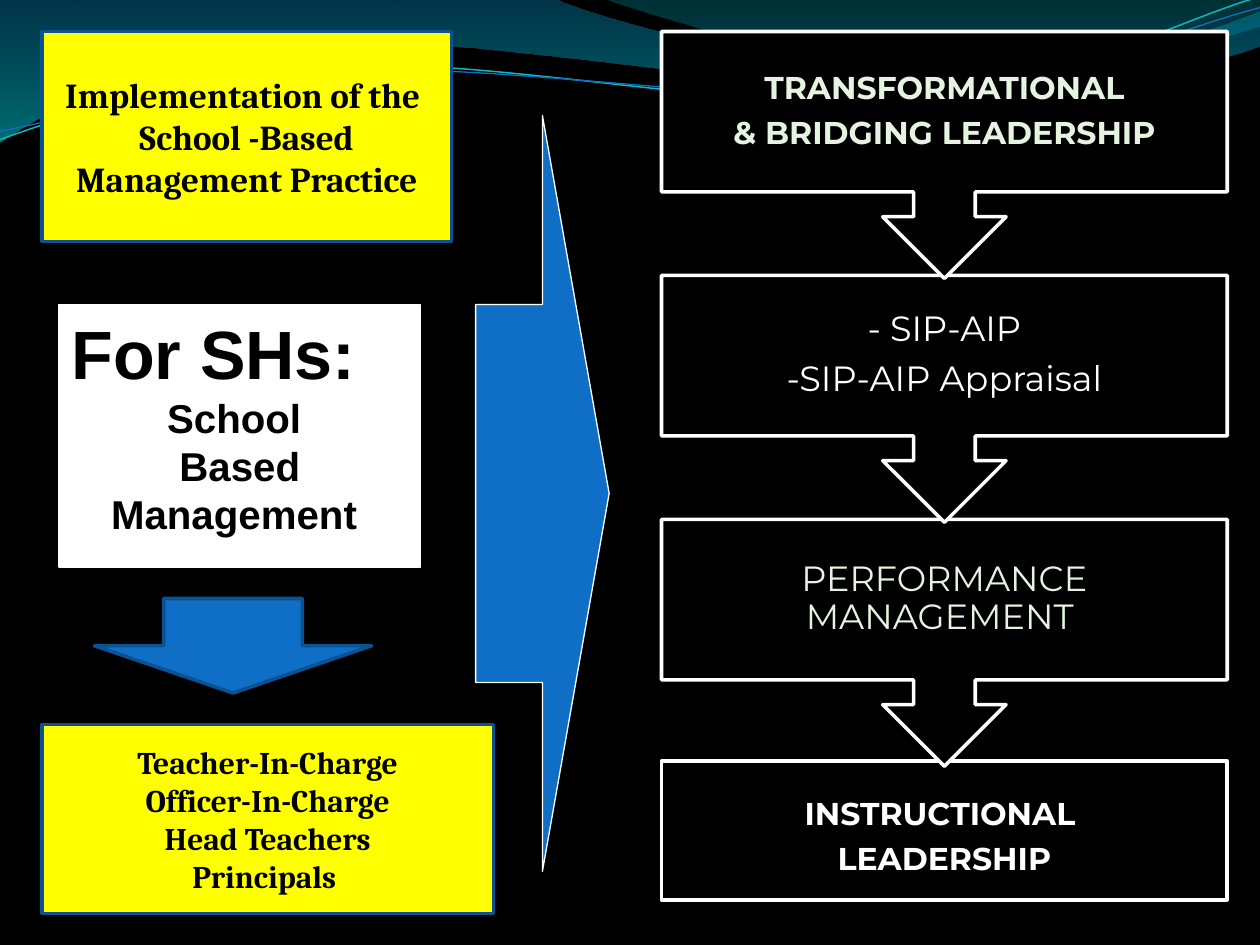
from dataclasses import dataclass
from typing import Optional

import pptx
import pptx.dml.color
import pptx.enum.shapes
import pptx.enum.text
import pptx.oxml
import pptx.oxml.ns
import pptx.util
from lxml import etree

Pt = pptx.util.Pt
qn = pptx.oxml.ns.qn
SHAPE = pptx.enum.shapes.MSO_SHAPE
ANCHOR = pptx.enum.text.MSO_ANCHOR
ALIGN = pptx.enum.text.PP_ALIGN

COLORS = {
    "black": "000000", "white": "FFFFFF", "yellow": "FFFF00",
    "blue": "0F6FC6", "navy": "0B5292", "mint": "E5F4E0", "teal": "0AB8BF",
}


@dataclass(frozen=True)
class Run:
    text: str
    size: float
    font: str
    color: str = "black"
    bold: bool = True


@dataclass(frozen=True)
class Para:
    runs: tuple[Run, ...]
    align: ALIGN = ALIGN.CENTER


@dataclass(frozen=True)
class Box:
    left: float
    top: float
    width: float
    height: float


@dataclass(frozen=True)
class GradientStop:
    position: int
    color: str
    opacity: int


@dataclass(frozen=True)
class Wave:
    """Pieces of two numbers are straight lines, pieces of six are cubic curves."""
    start: tuple[float, float]
    pieces: tuple[tuple[float, ...], ...]
    gradient: tuple[GradientStop, ...] = ()
    line: Optional[str] = None
    line_width: float = 0
    rotation: float = 0


@dataclass(frozen=True)
class Step:
    lines: tuple[str, ...]
    size: float
    color: str
    bold: bool
    inset: float


WAVES = (
    Wave((0, 0), ((316.8, -0.7), (342.7, 12.2, 478.1, 45.4, 545.8, 45.4),
                  (614.2, 45.4, 689.8, 18.7, 720, 6.5), (720.7, 25.9),
                  (707.8, 31.7, 626.4, 54.7, 537.1, 54),
                  (447.8, 54, 275, 20.2, 185, 24.5),
                  (92.9, 25.9, 33.1, 59.8, -0.7, 81.4), (0, 0)),
         gradient=(GradientStop(0, "0074A1", 45), GradientStop(100, "00C6CF", 55))),
    Wave((344.9, -0.7), ((366.5, 7.9, 491, 44.6, 553.7, 46.8),
                         (616.3, 49.7, 691.9, 23, 720, 15.1), (720, 0), (344.9, -0.7)),
         gradient=(GradientStop(0, "00A1A9", 30), GradientStop(80, "008BBF", 45))),
    Wave((-1.4, 62.9), ((33.8, 51.7, 114.1, 29.4, 199.8, 29.9),
                        (284.9, 30.3, 425.8, 67.3, 512.4, 64.9),
                        (599, 62.4, 676.5, 25.7, 720.2, 15.5)),
         line="teal", line_width=0.85, rotation=357.3),
    Wave((-1.1, 58), ((32.9, 53.8, 118.3, 32.5, 204.1, 33),
                      (290.6, 33.4, 429.7, 63.8, 515.5, 61.4),
                      (601.3, 59.6, 678.4, 30.1, 721.4, 21.3)),
         line="blue", line_width=0.75, rotation=357.3),
)

STEPS = (
    Step(("TRANSFORMATIONAL", "& BRIDGING LEADERSHIP"), 18, "mint", True, 10),
    Step(("- SIP-AIP", "-SIP-AIP Appraisal"), 20, "white", False, 11.5),
    Step(("PERFORMANCE MANAGEMENT ",), 20, "mint", False, 11.5),
)
LAST_STEP = Step(("INSTRUCTIONAL ", "LEADERSHIP"), 18, "white", True, 10)
STEP_LEFT, STEP_TOP, STEP_WIDTH, STEP_PITCH = 378, 18, 323.3, 139.4
CALLOUT_HEIGHT, CALLOUT_BODY = 141.1, 91.4
LAST_TOP, LAST_HEIGHT, LAST_TEXT_SHIFT = 435, 79.2, 4


def rgb(name: str):
    return pptx.dml.color.RGBColor.from_string(COLORS[name])


def set_gradient(sp, stops: tuple[GradientStop, ...]) -> None:
    """Fill from top to bottom with translucent stops."""
    sp.fill.background()
    old = sp._element.spPr.find(qn("a:noFill"))
    stop_xml = "".join(
        f'<a:gs pos="{g.position * 1000}"><a:srgbClr val="{g.color}">'
        f'<a:alpha val="{g.opacity * 1000}"/></a:srgbClr></a:gs>' for g in stops)
    fill = pptx.oxml.parse_xml(
        f'<a:gradFill {pptx.oxml.ns.nsdecls("a")} rotWithShape="1">'
        f'<a:gsLst>{stop_xml}</a:gsLst><a:lin ang="5400000" scaled="0"/></a:gradFill>')
    old.getparent().replace(old, fill)


def bend_segments(sp, pieces: tuple[tuple[float, ...], ...]) -> None:
    """Join the three segments of each curved piece into one cubic curve."""
    segments = iter(list(sp._element.iter(qn("a:lnTo"))))
    for piece in pieces:
        group = [next(segments) for _ in range(len(piece) // 2)]
        if len(group) == 3:
            curve = etree.Element(qn("a:cubicBezTo"))
            group[0].addprevious(curve)
            for segment in group:
                curve.append(segment[0])
                segment.getparent().remove(segment)


def add_wave(s, wave: Wave) -> None:
    points = [(Pt(x), Pt(y)) for piece in wave.pieces
              for x, y in zip(piece[::2], piece[1::2])]
    builder = s.shapes.build_freeform(*map(Pt, wave.start))
    builder.add_line_segments(points, close=bool(wave.gradient))
    sp = builder.convert_to_shape()
    bend_segments(sp, wave.pieces)
    sp.rotation = wave.rotation
    sp.shadow.inherit = False
    if wave.gradient:
        set_gradient(sp, wave.gradient)
        sp.line.fill.background()
    else:
        sp.fill.background()
        sp.line.color.rgb = rgb(wave.line)
        sp.line.width = Pt(wave.line_width)


def add_shape(s, kind: SHAPE, box: Box, fill: str, line: str, width: float = 2):
    sp = s.shapes.add_shape(kind, Pt(box.left), Pt(box.top), Pt(box.width), Pt(box.height))
    sp.shadow.inherit = False
    sp.fill.solid()
    sp.fill.fore_color.rgb = rgb(fill)
    sp.line.color.rgb = rgb(line)
    sp.line.width = Pt(width)
    return sp


def write(tf, paras, anchor=ANCHOR.MIDDLE, spacing=None, after=0) -> None:
    tf.word_wrap = True
    tf.vertical_anchor = anchor
    for i, para in enumerate(paras):
        p = tf.paragraphs[0] if i == 0 else tf.add_paragraph()
        p.alignment = para.align
        p.line_spacing = spacing
        p.space_after = Pt(after)
        for run in para.runs:
            r = p.add_run()
            r.text = run.text
            r.font.size = Pt(run.size)
            r.font.name = run.font
            r.font.bold = run.bold
            r.font.color.rgb = rgb(run.color)


def one_run_paras(lines, *style) -> list[Para]:
    return [Para((Run(line, *style),)) for line in lines]


def add_step_text(s, step: Step, top: float, height: float) -> None:
    tf = s.shapes.add_textbox(Pt(STEP_LEFT), Pt(top), Pt(STEP_WIDTH), Pt(height)).text_frame
    tf.margin_left = tf.margin_right = tf.margin_top = tf.margin_bottom = Pt(step.inset)
    paras = one_run_paras(step.lines, step.size, "Montserrat", step.color, step.bold)
    write(tf, paras, spacing=0.9, after=0.35 * step.size)


def add_steps(s) -> None:
    """Draw upwards, so that each arrow tip lies over the box below it."""
    add_shape(s, SHAPE.RECTANGLE, Box(STEP_LEFT, LAST_TOP, STEP_WIDTH, LAST_HEIGHT),
              "black", "white")
    add_step_text(s, LAST_STEP, LAST_TOP + LAST_TEXT_SHIFT, LAST_HEIGHT)
    for i, step in reversed(list(enumerate(STEPS))):
        top = STEP_TOP + i * STEP_PITCH
        sp = add_shape(s, SHAPE.UP_ARROW_CALLOUT,
                       Box(STEP_LEFT, top, STEP_WIDTH, CALLOUT_HEIGHT), "black", "white")
        sp.rotation = 180
        add_step_text(s, step, top, CALLOUT_BODY)


def add_left_column(s) -> None:
    sp = add_shape(s, SHAPE.RECTANGLE, Box(33.8, 174.2, 206.6, 149.8), "white", "white", 0.75)
    heading = Para((Run("For SHs: ", 39, "Arial"), Run(" ", 23, "Arial")), ALIGN.LEFT)
    body = one_run_paras(("School ", "Based Management "), 23, "Arial")
    write(sp.text_frame, [heading, *body], ANCHOR.TOP)

    add_shape(s, SHAPE.RIGHT_ARROW, Box(271.8, 66, 76.3, 432), "blue", "white", 0.75)

    cards = (
        (Box(24, 18, 234, 120), 20,
         ("Implementation of the ", "School -Based Management Practice")),
        (Box(24, 414, 258, 108), 18,
         ("Teacher-In-Charge", "Officer-In-Charge", "Head Teachers", "Principals ")),
    )
    for box, size, lines in cards:
        sp = add_shape(s, SHAPE.RECTANGLE, box, "yellow", "navy")
        write(sp.text_frame, one_run_paras(lines, size, "Cambria"))
    add_shape(s, SHAPE.DOWN_ARROW, Box(54, 342, 158.4, 54), "blue", "navy")


def main() -> None:
    prs = pptx.Presentation()
    prs.slide_width, prs.slide_height = Pt(720), Pt(540)
    s = prs.slides.add_slide(prs.slide_layouts[6])
    s.background.fill.solid()
    s.background.fill.fore_color.rgb = rgb("black")
    for wave in WAVES:
        add_wave(s, wave)
    add_steps(s)
    add_left_column(s)
    prs.save("out.pptx")


if __name__ == "__main__":
    main()
